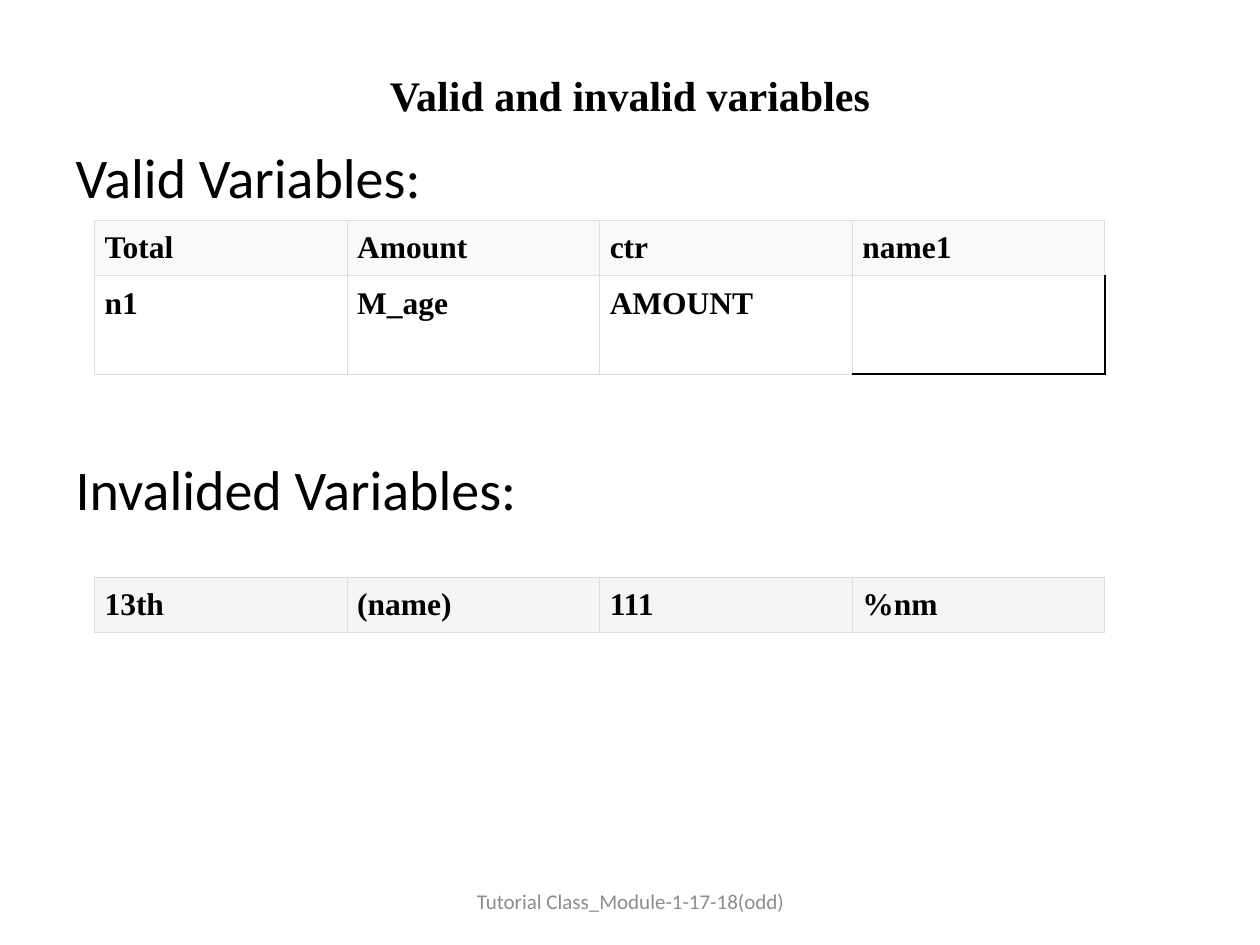
from lxml.etree import SubElement
from pptx import Presentation
from pptx.dml.color import RGBColor
from pptx.enum.text import MSO_ANCHOR, MSO_AUTO_SIZE, PP_ALIGN
from pptx.oxml.ns import qn
from pptx.util import Inches, Pt

COLORS = {"text": "000000", "footer": "8C8C8C", "border": "DDDDDD",
          "header": "F9F9F9", "plain": "FFFFFF", "invalid": "F5F5F5"}
TITLE = "Valid and invalid variables"
HEADINGS = [("Valid Variables:", None), ("Invalided Variables:", 140)]
FOOTER = "Tutorial Class_Module-1-17-18(odd)"
TABLES = [
    {"top": 1.75, "rows": [
        (0.44, "header", ["Total", "Amount", "ctr", "name1"]),
        (0.78, "plain", ["n1", "M_age", "AMOUNT", ""])]},
    {"top": 4.58, "rows": [
        (0.44, "invalid", ["13th", "(name)", "111", "%nm"])]},
]
LEFT, WIDTH, COLS = 0.75, 8.02, 4
SERIF, SANS = "Times New Roman", "Calibri"


def write(p, text, size, font=SANS, color="text", bold=False, align=None, before=None):
    r = p.add_run()
    r.text = text
    r.font.size, r.font.name, r.font.bold = Pt(size), font, bold
    r.font.color.rgb = RGBColor.from_string(COLORS[color])
    p.alignment = align
    if before is not None:
        p.space_before = Pt(before)


def place(sp, left, top, width, height, anchor):
    sp.left, sp.top, sp.width, sp.height = map(Inches, (left, top, width, height))
    tf = sp.text_frame
    tf.word_wrap, tf.auto_size, tf.vertical_anchor = True, MSO_AUTO_SIZE.NONE, anchor
    return tf


def set_borders(cell, edges):
    tcPr = cell._tc.get_or_add_tcPr()
    for side, (color, width) in edges.items():
        ln = SubElement(tcPr, qn(f"a:ln{side}"), w=str(Pt(width)))
        fill = SubElement(ln, qn("a:solidFill"))
        SubElement(fill, qn("a:srgbClr"), val=COLORS[color])


def add_grid(s, top, rows):
    height = sum(h for h, _, _ in rows)
    table = s.shapes.add_table(len(rows), COLS, Inches(LEFT), Inches(top),
                               Inches(WIDTH), Inches(height)).table
    table.first_row = table.horz_banding = False
    for i, (h, fill, texts) in enumerate(rows):
        table.rows[i].height = Inches(h)
        for j, text in enumerate(texts):
            cell = table.cell(i, j)
            edges = dict.fromkeys("LRTB", ("border", 0.75))
            if not text:
                edges.update(R=("text", 1), B=("text", 1))
            set_borders(cell, edges)
            cell.margin_left = cell.margin_right = Inches(0.08)
            cell.margin_top = cell.margin_bottom = Inches(0.08)
            if text:
                cell.fill.solid()
                cell.fill.fore_color.rgb = RGBColor.from_string(COLORS[fill])
                write(cell.text_frame.paragraphs[0], text, 18, font=SERIF, bold=True)
            else:
                cell.fill.background()


def main():
    """Build the slide on valid and invalid variable names."""
    prs = Presentation()
    prs.slide_width, prs.slide_height = Inches(10), Inches(7.5)
    s = prs.slides.add_slide(prs.slide_layouts[1])

    tf = place(s.shapes.title, 0.5, 0.42, 9, 0.67, MSO_ANCHOR.MIDDLE)
    write(tf.paragraphs[0], TITLE, 24, font=SERIF, bold=True, align=PP_ALIGN.CENTER)

    tf = place(s.placeholders[1], 0.5, 1.08, 9, 5.62, MSO_ANCHOR.TOP)
    for i, (text, before) in enumerate(HEADINGS):
        p = tf.add_paragraph() if i else tf.paragraphs[0]
        write(p, text, 32, before=before)
        pPr = p._p.get_or_add_pPr()
        pPr.set("marL", "0")
        pPr.set("indent", "0")
        SubElement(pPr, qn("a:buNone"))

    sp = s.shapes.add_textbox(0, 0, 0, 0)
    tf = place(sp, 3.42, 6.95, 3.17, 0.4, MSO_ANCHOR.MIDDLE)
    write(tf.paragraphs[0], FOOTER, 12, color="footer", align=PP_ALIGN.CENTER)

    for grid in TABLES:
        add_grid(s, **grid)
    prs.save("out.pptx")


if __name__ == "__main__":
    main()
